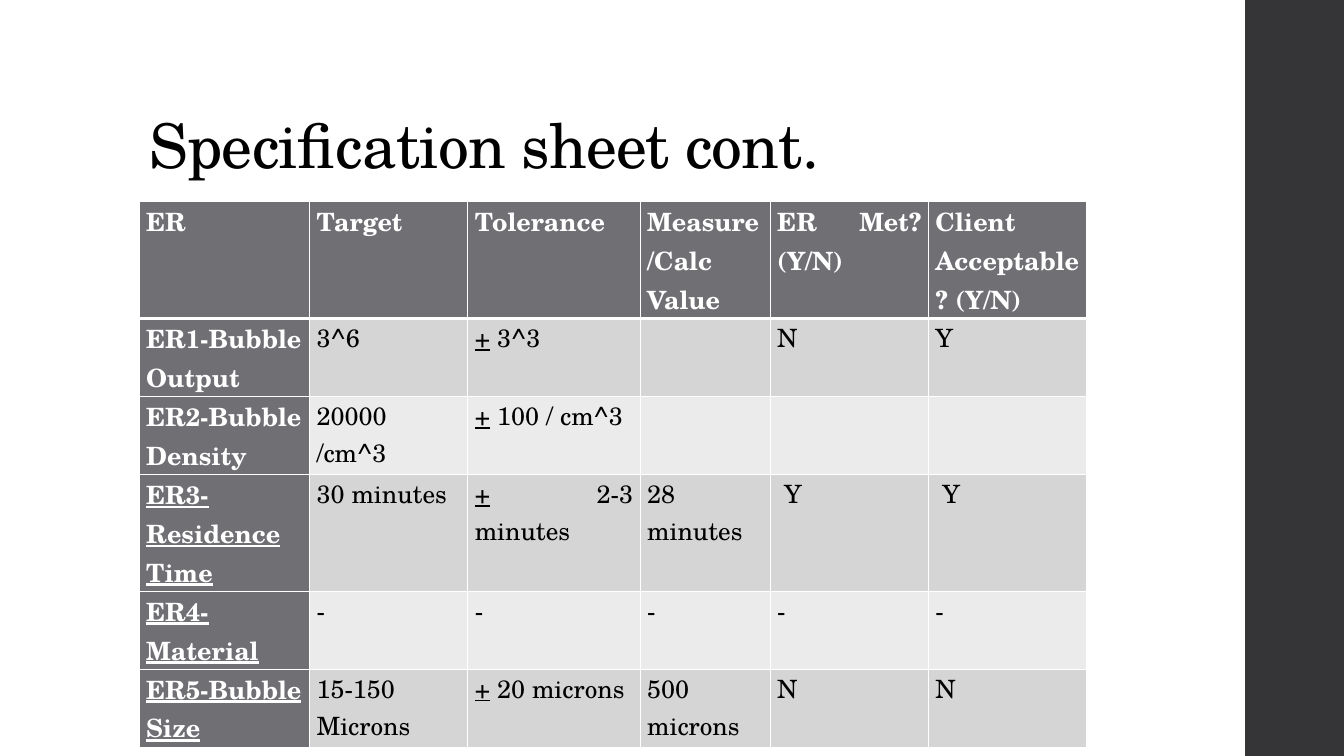
from lxml.etree import SubElement
from pptx import Presentation
from pptx.dml.color import RGBColor
from pptx.enum.shapes import MSO_SHAPE as Shape
from pptx.enum.text import MSO_ANCHOR as Anchor, PP_ALIGN as Align
from pptx.oxml.ns import qn
from pptx.util import Inches, Pt

COLORS = {
    "sidebar": "353537",
    "heading": "6F6F74",
    "odd": "D5D5D6",
    "even": "EBEBEB",
    "light": "FFFFFF",
    "dark": "000000",
}
FONT = "TeX Gyre Schola"

COLUMN_WIDTHS = [1.69, 1.57, 1.71, 1.29, 1.57, 1.57]
ROW_HEIGHT = 0.7
# A leading "+" in the body is underlined to read as plus-minus
SPECIFICATIONS = [
    ["ER", "Target", "Tolerance", "Measure/Calc Value", "ER Met? (Y/N)",
     "Client Acceptable? (Y/N)"],
    ["ER1-Bubble Output", "3^6", "+ 3^3", "", "N", "Y"],
    ["ER2-Bubble Density", "20000 /cm^3", "+ 100 / cm^3", "", "", ""],
    ["ER3-Residence Time", "30 minutes", "+ 2-3 minutes", "28 minutes", " Y", " Y"],
    ["ER4-Material", "-", "-", "-", "-", "-"],
    ["ER5-Bubble Size", "15-150 Microns", "+ 20 microns", "500 microns", "N", "N"],
]
FIRST_UNDERLINED_ROW = 3


def rgb(name):
    return RGBColor.from_string(COLORS[name])


class SpecSlide:
    """Holds the style and the current slide."""

    def __init__(self, slide):
        self.slide = slide

    def style(self, font, size, color, bold=False):
        font.name, font.size, font.bold = FONT, Pt(size), bold
        font.color.rgb = rgb(color)

    def sidebar(self, left, width, height):
        bar = self.slide.shapes.add_shape(
            Shape.RECTANGLE, Inches(left), 0, Inches(width), Inches(height))
        bar.shadow.inherit = False
        bar.fill.solid()
        bar.fill.fore_color.rgb = rgb("sidebar")
        bar.line.fill.background()

    def title(self, text, left, top, width, height):
        title = self.slide.shapes.title
        title.left, title.top = Inches(left), Inches(top)
        title.width, title.height = Inches(width), Inches(height)
        frame = title.text_frame
        frame.text = text
        frame.word_wrap = True
        frame.vertical_anchor = Anchor.BOTTOM
        line = frame.paragraphs[0]
        line.alignment, line.line_spacing = Align.LEFT, 0.9
        self.style(line.font, 44, "dark")
        line.runs[0].font._element.set("spc", "-50")

    def borders(self, cell, top=1, bottom=1):
        props = cell._tc.get_or_add_tcPr()
        for side, points in (("L", 1), ("R", 1), ("T", top), ("B", bottom)):
            edge = SubElement(props, qn(f"a:ln{side}"), w=str(Pt(points)))
            fill = SubElement(edge, qn("a:solidFill"))
            SubElement(fill, qn("a:srgbClr"), val=COLORS["light"])

    def cell(self, cell, text, row, column):
        heading = row == 0 or column == 0
        self.borders(cell, top=3 if row == 1 else 1, bottom=3 if row == 0 else 1)
        cell.fill.solid()
        cell.fill.fore_color.rgb = rgb(
            "heading" if heading else "odd" if row % 2 else "even")
        cell.margin_left = cell.margin_right = Inches(0.07)
        cell.margin_top = cell.margin_bottom = 0
        line = cell.text_frame.paragraphs[0]
        line.alignment = Align.JUSTIFY
        self.style(line.font, 18, "light" if heading else "dark", heading)
        if text.startswith("+"):
            sign = line.add_run()
            sign.text, sign.font.underline = "+", True
            text = text[1:]
        if text:
            value = line.add_run()
            value.text = text
            if column == 0 and row >= FIRST_UNDERLINED_ROW:
                value.font.underline = True

    def table(self, rows, widths, left, top):
        table = self.slide.shapes.add_table(
            len(rows), len(widths), Inches(left), Inches(top),
            Inches(sum(widths)), Inches(ROW_HEIGHT * len(rows))).table
        for column, width in zip(table.columns, widths):
            column.width = Inches(width)
        for r, texts in enumerate(rows):
            for c, text in enumerate(texts):
                self.cell(table.cell(r, c), text, r, c)


def main():
    deck = Presentation()
    deck.slide_width, deck.slide_height = Inches(13.33), Inches(7.5)
    sheet = SpecSlide(deck.slides.add_slide(deck.slide_layouts[5]))

    # Dark band on the right edge
    sheet.sidebar(12.35, 0.98, 7.5)
    # Heading and requirements table
    sheet.title("Specification sheet cont.", 1.38, 0.4, 10.6, 1.45)
    sheet.table(SPECIFICATIONS, COLUMN_WIDTHS, 1.38, 2)

    deck.save("out.pptx")


if __name__ == "__main__":
    main()
